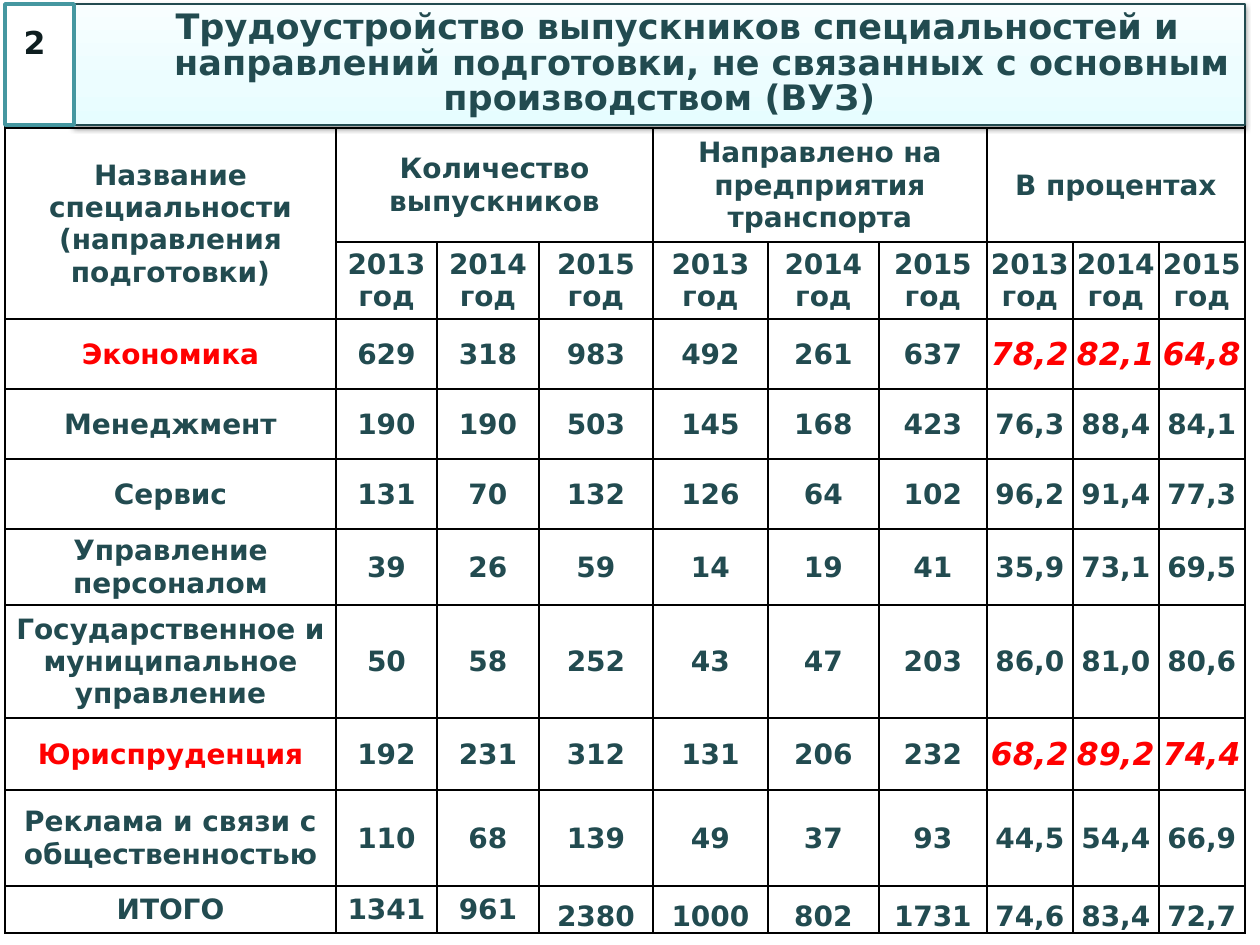
from pptx import Presentation
from pptx.dml.color import RGBColor
from pptx.enum.shapes import MSO_SHAPE
from pptx.enum.text import MSO_ANCHOR, MSO_AUTO_SIZE, PP_ALIGN
from pptx.oxml import parse_xml
from pptx.oxml.ns import nsdecls, qn
from pptx.util import Pt
from copy import deepcopy

PX = 914400 // 126
FONT = "DejaVu Sans"
CENTER = PP_ALIGN.CENTER
MIDDLE, BOTTOM = MSO_ANCHOR.MIDDLE, MSO_ANCHOR.BOTTOM
TITLE_ONLY = 5

TEAL = RGBColor(0x22, 0x4B, 0x50)
DARK = RGBColor(0x0E, 0x1E, 0x20)
FRAME = RGBColor(0x45, 0x97, 0xA0)
RED = RGBColor(0xFF, 0x00, 0x00)
WHITE = RGBColor(0xFF, 0xFF, 0xFF)
TITLE_STOPS = [
    (0, RGBColor(0xE6, 0xFD, 0xFF)),
    (0.35, RGBColor(0xEC, 0xFD, 0xFF)),
    (1, RGBColor(0xF8, 0xFE, 0xFF)),
]

# Content: title lines carry their left margin and first-line indent in px
TITLE = [
    ("Трудоустройство выпускников специальностей и", 36, 0),
    ("направлений подготовки, не связанных с основным производством (ВУЗ)", 0, 85),
]
PAGE_NUMBER = "2"
NAME_HEADER = "Название специальности\v(направления подготовки)"
GROUPS = ["Количество выпускников", "Направлено на предприятия транспорта", "В процентах"]
YEARS = ["2013 год", "2014 год", "2015 год"]
ROWS = [
    ("Экономика", "629 318 983 492 261 637 78,2 82,1 64,8"),
    ("Менеджмент", "190 190 503 145 168 423 76,3 88,4 84,1"),
    ("Сервис", "131 70 132 126 64 102 96,2 91,4 77,3"),
    ("Управление персоналом", "39 26 59 14 19 41 35,9 73,1 69,5"),
    ("Государственное и муниципальное управление", "50 58 252 43 47 203 86,0 81,0 80,6"),
    ("Юриспруденция", "192 231 312 131 206 232 68,2 89,2 74,4"),
    ("Реклама и связи с общественностью", "110 68 139 49 37 93 44,5 54,4 66,9"),
    ("ИТОГО", "1341 961 2380 1000 802 1731 74,6 83,4 72,7"),
]
HIGHLIGHTED = {"Экономика", "Юриспруденция"}
COLUMN_WIDTHS = [331, 101, 102, 114, 115, 111, 108, 86, 86, 86]
ROW_HEIGHTS = [83, 114, 77, 70, 70, 70, 76, 113, 72, 96, 47]
FIRST_PERCENT = 7


def place(shape, left, top, width, height):
    shape.left, shape.top = left * PX, top * PX
    shape.width, shape.height = width * PX, height * PX


def style(para, size, color, italic=False):
    para.alignment = CENTER
    font = para.font
    font.name, font.size, font.bold, font.italic = FONT, Pt(size), True, italic
    font.color.rgb = color


def set_borders(cell, sides):
    for side in sides:
        cell._tc.get_or_add_tcPr().append(parse_xml(
            f'<a:ln{side} {nsdecls("a")} w="12700"><a:solidFill>'
            f'<a:srgbClr val="000000"/></a:solidFill></a:ln{side}>'))


def fill_cell(cell, text, size=16, color=TEAL, italic=False, anchor=MIDDLE):
    cell.text = text
    cell.vertical_anchor = anchor
    cell.margin_left = cell.margin_right = cell.margin_top = PX
    cell.margin_bottom = 0
    style(cell.text_frame.paragraphs[0], size, color, italic)


def add_graduates_table(page):
    frame = page.shapes.add_table(len(ROW_HEIGHTS), len(COLUMN_WIDTHS), 5 * PX, 45 * PX,
                                  sum(COLUMN_WIDTHS) * PX, sum(ROW_HEIGHTS) * PX)
    table = frame.table
    table.first_row = table.horz_banding = False
    for column, width in zip(table.columns, COLUMN_WIDTHS):
        column.width = width * PX
    for row, height in zip(table.rows, ROW_HEIGHTS):
        row.height = height * PX

    # Borders and fills; the top row lies under the title
    for r in range(len(ROW_HEIGHTS)):
        for c in range(len(COLUMN_WIDTHS)):
            cell = table.cell(r, c)
            set_borders(cell, "LRTB" if r else "LRB")
            if r:
                cell.fill.solid()
                cell.fill.fore_color.rgb = WHITE
            else:
                cell.fill.background()
    table.cell(0, 0).merge(table.cell(0, len(COLUMN_WIDTHS) - 1))

    # Two-level header
    table.cell(1, 0).merge(table.cell(2, 0))
    fill_cell(table.cell(1, 0), NAME_HEADER)
    for g, group in enumerate(GROUPS):
        first = 1 + g * len(YEARS)
        table.cell(1, first).merge(table.cell(1, first + len(YEARS) - 1))
        fill_cell(table.cell(1, first), group)
        for offset, year in enumerate(YEARS):
            fill_cell(table.cell(2, first + offset), year)

    # Body
    for r, (name, values) in enumerate(ROWS, start=3):
        marked = name in HIGHLIGHTED
        fill_cell(table.cell(r, 0), name, color=RED if marked else TEAL)
        for c, value in enumerate(values.split(), start=1):
            low = r == len(ROW_HEIGHTS) - 1 and c >= 3
            anchor = BOTTOM if low else MIDDLE
            if marked and c >= FIRST_PERCENT:
                fill_cell(table.cell(r, c), value, 18, RED, True, anchor)
            else:
                fill_cell(table.cell(r, c), value, anchor=anchor)


def format_title(page):
    title = page.shapes.title
    page.shapes._spTree.append(title._element)  # bring in front of the table
    place(title, 74, 4, 1171, 121)
    title.fill.gradient()
    title.fill.gradient_angle = 90
    stop_list = title._element.spPr.find(".//" + qn("a:gsLst"))
    stop_list.append(deepcopy(stop_list[-1]))
    for stop, (position, color) in zip(title.fill.gradient_stops, TITLE_STOPS):
        stop.position = position
        stop.color.rgb = color
    title.line.color.rgb = TEAL
    title.line.width = Pt(0.75)
    title._element.spPr.append(parse_xml(
        f'<a:effectLst {nsdecls("a")}><a:outerShdw blurRad="39370" dist="20320" '
        'dir="5400000" rotWithShape="0"><a:srgbClr val="000000"><a:alpha val="38000"/>'
        '</a:srgbClr></a:outerShdw></a:effectLst>'))

    text = title.text_frame
    text.word_wrap, text.auto_size = True, MSO_AUTO_SIZE.NONE
    text.vertical_anchor = MIDDLE
    text.text = "\n".join(line for line, _, _ in TITLE)
    for para, (_, margin, indent) in zip(text.paragraphs, TITLE):
        style(para, 20, TEAL)
        para.line_spacing = Pt(20)
        para.space_before = para.space_after = Pt(0)
        properties = para._p.get_or_add_pPr()
        properties.set("marL", str(margin * PX))
        properties.set("indent", str(indent * PX))


def add_page_number(page):
    box = page.shapes.add_shape(MSO_SHAPE.RECTANGLE, 0, 0, 0, 0)
    place(box, 5, 4, 69, 121)
    box.shadow.inherit = False
    box.fill.solid()
    box.fill.fore_color.rgb = WHITE
    box.line.color.rgb = FRAME
    box.line.width = Pt(2)

    label = page.shapes.add_textbox(0, 0, 0, 0)
    place(label, 5, 18, 59, 48)
    label.text_frame.word_wrap = False
    label.text_frame.vertical_anchor = MIDDLE
    label.text_frame.text = PAGE_NUMBER
    style(label.text_frame.paragraphs[0], 18, DARK)


def main():
    deck = Presentation()
    deck.slide_width, deck.slide_height = 1260 * PX, 945 * PX
    page = deck.slides.add_slide(deck.slide_layouts[TITLE_ONLY])
    add_graduates_table(page)
    format_title(page)
    add_page_number(page)
    deck.save("out.pptx")


if __name__ == "__main__":
    main()
